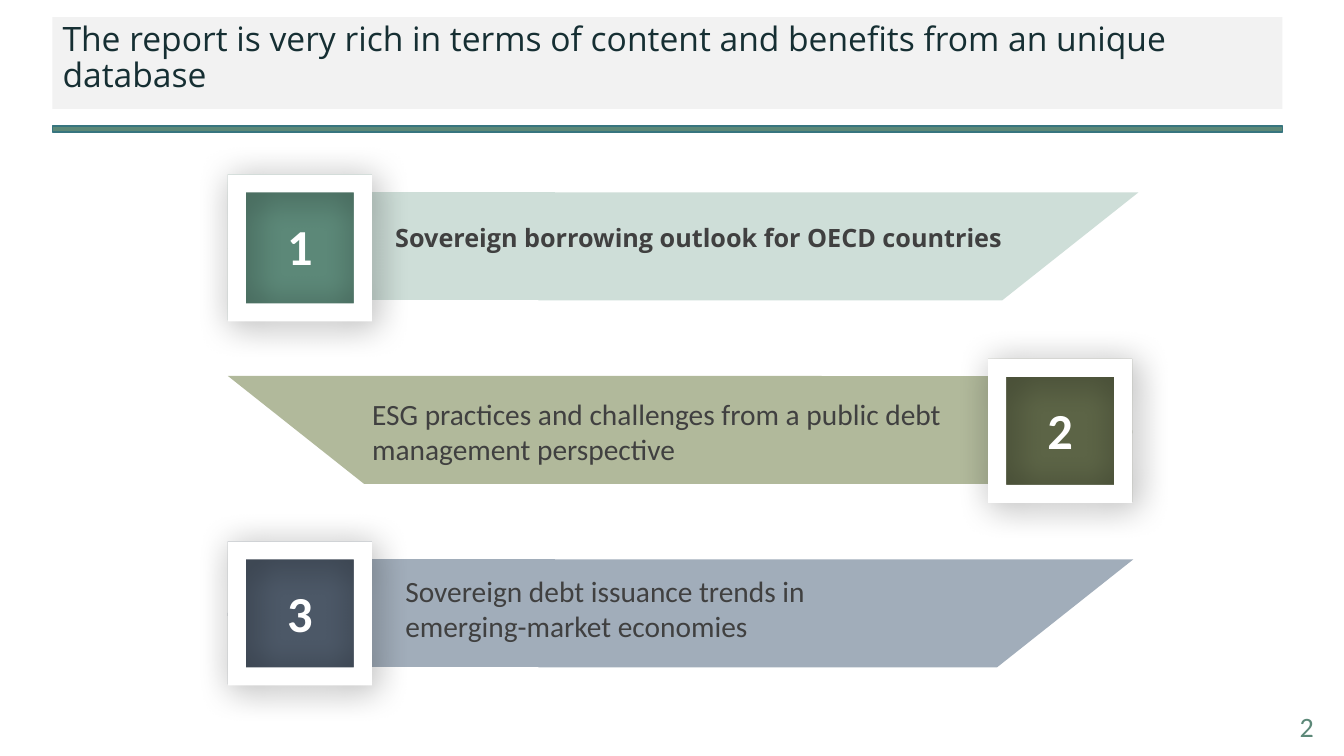
import pptx
import pptx.dml.color
import pptx.enum.shapes
import pptx.enum.text
import pptx.oxml
import pptx.oxml.ns
import pptx.util

EMU_PER_PX = 9144
SHAPES = pptx.enum.shapes.MSO_SHAPE
ALIGN = pptx.enum.text.PP_ALIGN
ANCHOR = pptx.enum.text.MSO_ANCHOR
GROW = pptx.enum.text.MSO_AUTO_SIZE.SHAPE_TO_FIT_TEXT


def px(length):
    return pptx.util.Emu(length * EMU_PER_PX)


def colour(value):
    return pptx.dml.color.RGBColor.from_string(value)


def apply(target, values):
    for name, value in values.items():
        setattr(target, name, value)


class SlideBuilder:
    GREEN = "5C8878"
    INK = "404040"
    SHADOW = (
        '<a:outerShdw %s blurRad="317500" dist="50800" dir="2700000" '
        'algn="ctr" rotWithShape="0"><a:srgbClr val="000000">'
        '<a:alpha val="35000"/></a:srgbClr></a:outerShdw>'
    ) % pptx.oxml.ns.nsdecls("a")

    def __init__(self, presentation):
        self.slide = presentation.slides.add_slide(presentation.slide_layouts[5])

    def paint(self, shape, fill, line=None):
        shape.shadow.inherit = False
        shape.fill.solid()
        shape.fill.fore_color.rgb = colour(fill)
        if line:
            shape.line.color.rgb = colour(line)
            shape.line.width = pptx.util.Pt(1)
        else:
            shape.line.fill.background()

    def box(self, area, fill, line=None, preset=SHAPES.RECTANGLE):
        shape = self.slide.shapes.add_shape(preset, *map(px, area))
        self.paint(shape, fill, line)
        return shape

    def frame(self, area):
        frame = self.box(area, "FFFFFF", preset=SHAPES.FRAME)
        effects = frame._element.spPr.find(pptx.oxml.ns.qn("a:effectLst"))
        effects.append(pptx.oxml.parse_xml(self.SHADOW))

    def outline(self, points, fill):
        builder = self.slide.shapes.build_freeform(*points[0], scale=EMU_PER_PX)
        builder.add_line_segments(points[1:], close=True)
        self.paint(builder.convert_to_shape(), fill)

    def fill_text(self, shape, words, font, frame, paragraph):
        apply(shape.text_frame, {"word_wrap": True, **frame})
        shape.text_frame.text = words
        line = shape.text_frame.paragraphs[0]
        apply(line, paragraph)
        font = dict(font)
        line.font.color.rgb = colour(font.pop("color"))
        font["size"] = pptx.util.Pt(font["size"])
        apply(line.font, font)

    def title(self, area, words):
        title = self.slide.shapes.title
        apply(title, dict(zip(("left", "top", "width", "height"), map(px, area))))
        title.fill.solid()
        title.fill.fore_color.rgb = colour("F2F2F2")
        self.fill_text(
            title, words,
            {"name": "Open Sans", "size": 24, "color": "162F33"},
            {"vertical_anchor": ANCHOR.TOP, "auto_size": GROW},
            {"alignment": ALIGN.LEFT, "line_spacing": 0.9},
        )

    def text(self, area, words, font, frame, paragraph):
        box = self.slide.shapes.add_textbox(*map(px, area))
        self.fill_text(box, words, font, frame, paragraph)

    def banner(self, top, tip, mirrored, band_fill, tile_fill, frame_top, frame_height):
        def place(x):
            return 1349 - x if mirrored else x

        bottom = top + 107
        shoulder = tip - 135
        self.outline([(place(534), top), (place(tip), top),
                      (place(shoulder), bottom), (place(534), bottom)], band_fill)
        self.outline([(place(343), top), (place(550), top),
                      (place(550), bottom), (place(343), bottom)], band_fill)
        left = place(226) - (143 if mirrored else 0)
        self.box((left, frame_top + frame_height - 72, 143, 71), tile_fill)
        self.box((left, frame_top, 143, 74), tile_fill)
        self.frame((left, frame_top, 143, frame_height))

    def number(self, left, top, words):
        self.text(
            (left, top, 45, 71), words,
            {"name": "Calibri", "size": 36, "bold": True, "color": "FFFFFF"},
            {"vertical_anchor": ANCHOR.MIDDLE, "word_wrap": False, "auto_size": GROW},
            {"alignment": ALIGN.CENTER},
        )

    def topic(self, area, words, font, spacing):
        self.text(
            area, words, {"color": self.INK, **font},
            {"vertical_anchor": ANCHOR.MIDDLE, "margin_left": 0, "auto_size": GROW},
            {"line_spacing": spacing},
        )

    def page_number(self, area, words):
        self.text(
            area, words,
            {"name": "Calibri", "size": 20, "color": self.GREEN},
            {"vertical_anchor": ANCHOR.BOTTOM},
            {"alignment": ALIGN.RIGHT},
        )


def main():
    presentation = pptx.Presentation()
    presentation.slide_width = px(1333)
    presentation.slide_height = px(750)
    page = SlideBuilder(presentation)

    page.title((52, 17, 1220, 91),
               "The report is very rich in terms of content and benefits from an unique database")
    page.page_number((993, 589, 320, 153), "2")
    page.box((52, 125, 1220, 6), page.GREEN, "37757F")

    lead = {"name": "Open Sans", "size": 18, "bold": True}
    plain = {"name": "Calibri", "size": 21}
    banners = [
        (1129, False, "CEDED8", "5C8878", 173, 146),
        (1123, True, "B1B99B", "5C6446", 356, 143),
        (1124, False, "A1ADBA", "4C5867", 537, 143),
    ]
    topics = [
        ((392, 217, 647, 40), "Sovereign borrowing outlook for OECD countries", lead, 0.9),
        ((369, 387, 591, 81),
         "ESG practices and challenges from a public debt management perspective", plain, 1.0),
        ((402, 563, 533, 81),
         "Sovereign debt issuance trends in emerging-market economies", plain, 1.0),
    ]
    for row, (tip, mirrored, *look) in enumerate(banners):
        top = 191 + 182 * row
        page.banner(top, tip, mirrored, *look)
        page.number(1029 if mirrored else 275, top + 17, str(row + 1))
    for topic in topics:
        page.topic(*topic)

    presentation.save("out.pptx")


if __name__ == "__main__":
    main()
